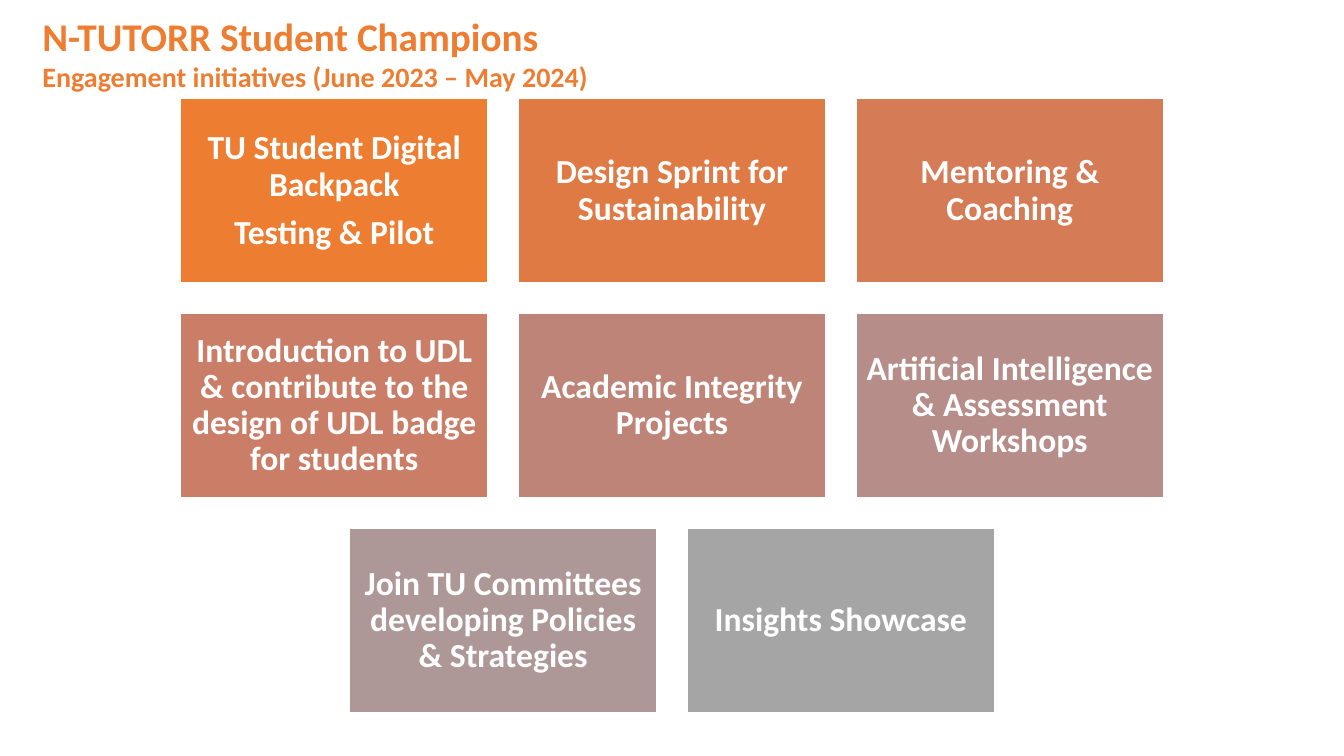
from dataclasses import dataclass

from pptx import Presentation
from pptx.dml.color import RGBColor
from pptx.enum.shapes import MSO_SHAPE as Preset
from pptx.enum.text import MSO_ANCHOR as Anchor, PP_ALIGN as Align
from pptx.slide import Slide
from pptx.util import Inches, Pt

SLIDE_WIDTH, SLIDE_HEIGHT = 13.33, 7.5
TILE_WIDTH, TILE_HEIGHT, GAP = 3.05, 1.83, 0.3
GRID_TOP = 0.98
TILE_MARGIN = 0.1
FONT = "Calibri"
TITLE_ONLY_LAYOUT = 5

WHITE = RGBColor(0xFF, 0xFF, 0xFF)
ORANGE = RGBColor(0xED, 0x7D, 0x31)
PUMPKIN = RGBColor(0xE0, 0x7A, 0x44)
COPPER = RGBColor(0xD5, 0x7B, 0x56)
TERRACOTTA = RGBColor(0xCA, 0x7E, 0x67)
CLAY = RGBColor(0xBF, 0x84, 0x78)
ROSE = RGBColor(0xB6, 0x8D, 0x88)
MAUVE = RGBColor(0xAD, 0x98, 0x97)
GREY = RGBColor(0xA5, 0xA5, 0xA5)


@dataclass(frozen=True)
class Initiative:
    lines: tuple[str, ...]
    fill: RGBColor


TITLE_LINES = (
    ("N-TUTORR Student Champions", 28),
    ("Engagement initiatives (June 2023 – May 2024)", 20),
)

INITIATIVE_ROWS = (
    (
        Initiative(("TU Student Digital Backpack", "Testing & Pilot"), ORANGE),
        Initiative(("Design Sprint for Sustainability",), PUMPKIN),
        Initiative(("Mentoring & Coaching",), COPPER),
    ),
    (
        Initiative(
            ("Introduction to UDL & contribute to the design of UDL badge for students",),
            TERRACOTTA,
        ),
        Initiative(("Academic Integrity Projects",), CLAY),
        Initiative(("Artificial Intelligence & Assessment Workshops",), ROSE),
    ),
    (
        Initiative(("Join TU Committees developing Policies & Strategies",), MAUVE),
        Initiative(("Insights Showcase",), GREY),
    ),
)


def style_font(paragraph, size: float, color: RGBColor) -> None:
    font = paragraph.font
    font.name, font.size, font.bold = FONT, Pt(size), True
    font.color.rgb = color


def write_title(slide: Slide) -> None:
    title = slide.shapes.title
    title.left, title.top = Inches(0.32), Inches(0.07)
    title.width, title.height = Inches(11.62), Inches(0.91)
    frame = title.text_frame
    frame.vertical_anchor = Anchor.TOP
    frame.text = "\n".join(text for text, _ in TITLE_LINES)
    for paragraph, (_, size) in zip(frame.paragraphs, TITLE_LINES):
        paragraph.alignment = Align.LEFT
        style_font(paragraph, size, ORANGE)


def draw_tile(slide: Slide, initiative: Initiative, left: float, top: float) -> None:
    tile = slide.shapes.add_shape(
        Preset.RECTANGLE, Inches(left), Inches(top), Inches(TILE_WIDTH), Inches(TILE_HEIGHT)
    )
    tile.shadow.inherit = False
    tile.fill.solid()
    tile.fill.fore_color.rgb = initiative.fill
    tile.line.color.rgb = WHITE
    tile.line.width = Pt(1)
    frame = tile.text_frame
    frame.word_wrap = True
    frame.vertical_anchor = Anchor.MIDDLE
    frame.margin_left = frame.margin_right = Inches(TILE_MARGIN)
    frame.margin_top = frame.margin_bottom = Inches(TILE_MARGIN)
    frame.text = "\n".join(initiative.lines)
    for index, paragraph in enumerate(frame.paragraphs):
        paragraph.alignment = Align.CENTER
        paragraph.line_spacing = 0.9
        if index:
            paragraph.space_before = Pt(8.4)
        style_font(paragraph, 24, WHITE)


def draw_row(slide: Slide, initiatives: tuple[Initiative, ...], top: float) -> None:
    row_width = len(initiatives) * (TILE_WIDTH + GAP) - GAP
    row_left = (SLIDE_WIDTH - row_width) / 2
    for column, initiative in enumerate(initiatives):
        draw_tile(slide, initiative, row_left + column * (TILE_WIDTH + GAP), top)


def main() -> None:
    presentation = Presentation()
    presentation.slide_width = Inches(SLIDE_WIDTH)
    presentation.slide_height = Inches(SLIDE_HEIGHT)
    slide = presentation.slides.add_slide(presentation.slide_layouts[TITLE_ONLY_LAYOUT])
    write_title(slide)
    for row, initiatives in enumerate(INITIATIVE_ROWS):
        draw_row(slide, initiatives, GRID_TOP + row * (TILE_HEIGHT + GAP))
    presentation.save("out.pptx")


if __name__ == "__main__":
    main()
